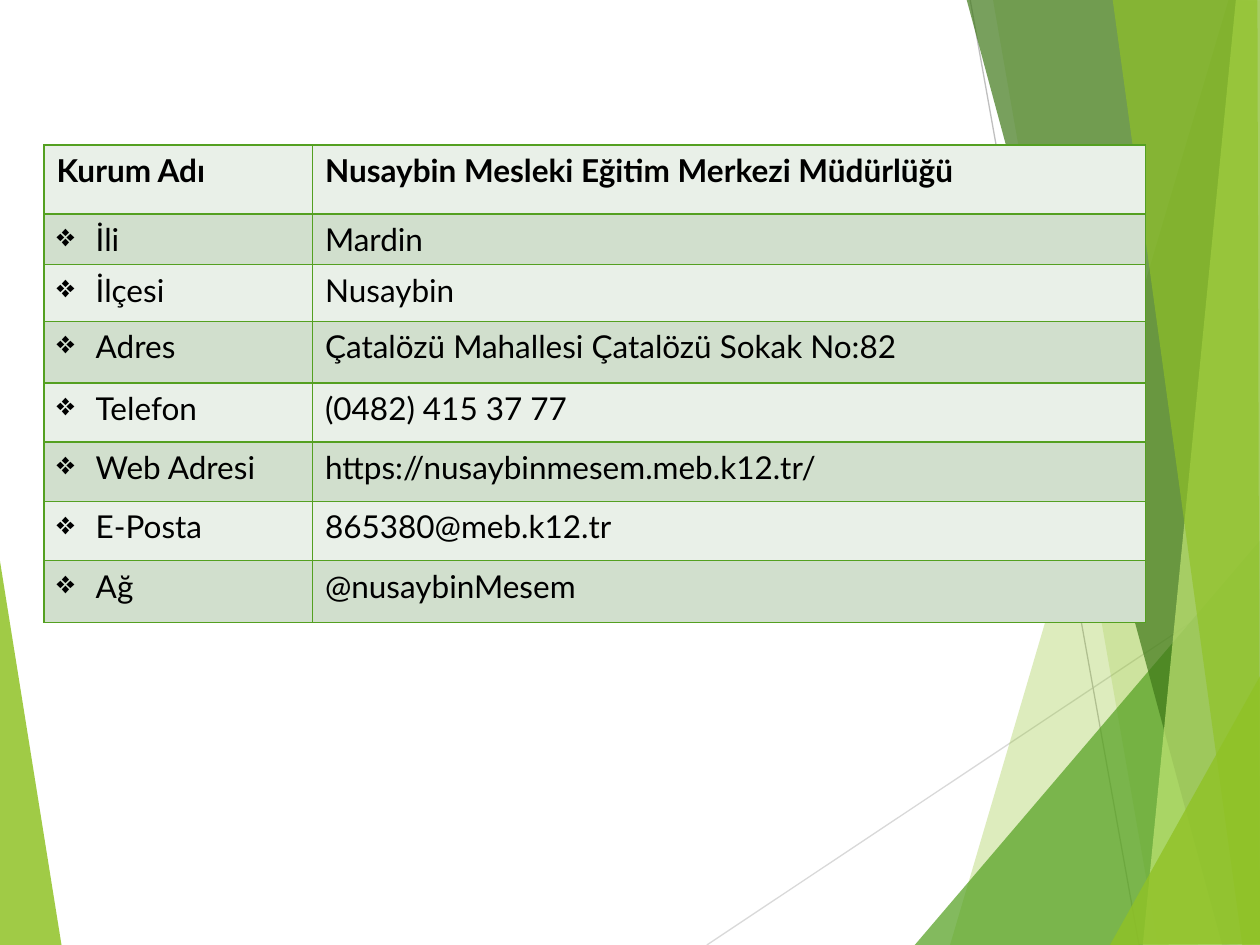
import lxml.etree
import pptx
import pptx.dml.color
import pptx.enum.shapes
import pptx.oxml.ns
import pptx.util

Inches = pptx.util.Inches
qn = pptx.oxml.ns.qn


def color(value):
    return pptx.dml.color.RGBColor.from_string(value)


def add_node(parent, tag, **attributes):
    return lxml.etree.SubElement(parent, qn(tag), attributes)


deck = pptx.Presentation()
deck.slide_width, deck.slide_height = Inches(10), Inches(7.5)
slide = deck.slides.add_slide(deck.slide_layouts[6])

left_facet = ("90C226", 85, [(-0.01, 4.39), (0.49, 7.51), (-0.01, 7.5)])
rays = [
    ("D9D9D9", (5.61, 7.5), (10.01, 4.57)),
    ("BFBFBF", (7.7, 0), (9.04, 7.5)),
]
right_facets = [
    ("90C226", 30, [(9.75, 0), (7.54, 7.5), (10.02, 7.51), (10.01, 0.01)]),
    ("90C226", 20, [(7.88, -0.01), (9.19, 7.5), (10.01, 7.5), (10.01, -0.01)]),
    ("54A021", 72, [(7.26, 7.5), (10, 4.29), (10.01, 7.5)]),
    ("3F7819", 70, [(7.67, -0.01), (9.7, 7.5), (10.01, 7.49), (10.01, -0.01)]),
    ("C0E474", 70, [(9.81, -0.01), (9.07, 7.5), (10.01, 7.5), (10, -0.01)]),
    ("90C226", 65, [(8.83, -0.01), (9.86, 7.5), (10, 7.5), (9.98, -0.01)]),
    ("90C226", 80, [(8.81, 7.5), (10.01, 5.35), (10.01, 7.49)]),
]

for ray_color, start, end in rays:
    ray = slide.shapes.add_connector(
        pptx.enum.shapes.MSO_CONNECTOR.STRAIGHT, *map(Inches, start + end)
    )
    ray.line.color.rgb = color(ray_color)
    ray.line.width = pptx.util.Pt(0.75)
    add_node(ray._element.spPr, "a:effectLst")

for facet_color, opacity, corners in [left_facet] + right_facets:
    points = [(Inches(x), Inches(y)) for x, y in corners]
    outline = slide.shapes.build_freeform(*points[0])
    outline.add_line_segments(points[1:], close=True)
    facet = outline.convert_to_shape()
    facet.shadow.inherit = False
    facet.line.fill.background()
    facet.fill.solid()
    facet.fill.fore_color.rgb = color(facet_color)
    tint = facet._element.spPr.find(qn("a:solidFill")).find(qn("a:srgbClr"))
    add_node(tint, "a:alpha", val=str(opacity * 1000))

contacts = [
    ("Kurum Adı", "Nusaybin Mesleki Eğitim Merkezi Müdürlüğü", 0.55),
    ("İli", "Mardin", 0.4),
    ("İlçesi", "Nusaybin", 0.45),
    ("Adres", "Çatalözü Mahallesi Çatalözü Sokak No:82", 0.49),
    ("Telefon", "(0482) 415 37 77", 0.47),
    ("Web Adresi", "https://nusaybinmesem.meb.k12.tr/", 0.47),
    ("E-Posta", "865380@meb.k12.tr", 0.47),
    ("Ağ", "@nusaybinMesem", 0.49),
]
text_format = {"name": "Lato", "size": pptx.util.Pt(18)}
bullet_indent = {"marL": str(Inches(0.31)), "indent": str(-Inches(0.31))}

contact_table = slide.shapes.add_table(
    len(contacts), 2, Inches(0.35), Inches(1.15), Inches(8.74), Inches(3.79)
).table
for column, width in zip(contact_table.columns, (2.13, 6.61)):
    column.width = Inches(width)

for row, (label, detail, height) in enumerate(contacts):
    contact_table.rows[row].height = Inches(height)
    for col, wording in enumerate((label, detail)):
        cell = contact_table.cell(row, col)
        cell.fill.solid()
        cell.fill.fore_color.rgb = color("D1DFCD" if row % 2 else "E9F0E8")
        paragraph = cell.text_frame.paragraphs[0]
        run = paragraph.add_run()
        run.text = wording
        for attribute, value in text_format.items():
            setattr(run.font, attribute, value)
        run.font.bold = row == 0
        run.font.color.rgb = color("000000")
        if row and not col:
            bullet = paragraph._p.get_or_add_pPr()
            bullet.attrib.update(bullet_indent)
            add_node(bullet, "a:buChar", char="❖")
        borders = cell._tc.get_or_add_tcPr()
        for position, side in enumerate(("a:lnL", "a:lnR", "a:lnT", "a:lnB")):
            border = add_node(borders, side, w=str(pptx.util.Pt(1)))
            add_node(add_node(border, "a:solidFill"), "a:srgbClr", val="54A021")
            borders.insert(position, border)

deck.save("out.pptx")
